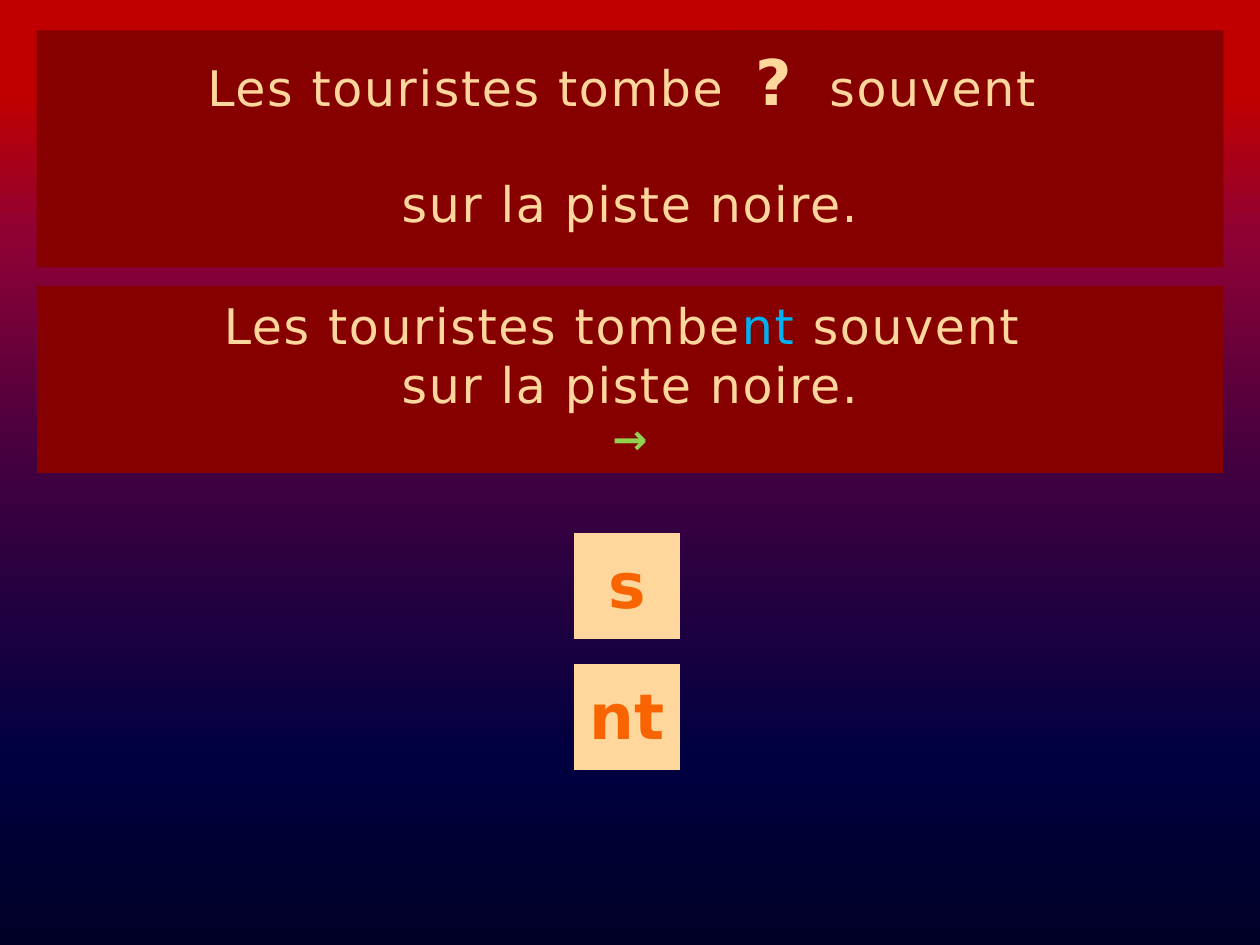
from dataclasses import dataclass

from lxml import etree
from pptx import Presentation, util as u
from pptx.dml.color import RGBColor
from pptx.enum import shapes, text
from pptx.oxml import ns


@dataclass(frozen=True)
class Theme:
    font: str = "DejaVu Sans"
    panel: str = "860000"
    cream: str = "FFD79D"
    orange: str = "F86400"
    blue: str = "00B0F0"
    green: str = "92D050"
    sky: tuple = ((0, "000026"), (20, "000040"), (50, "400040"),
                  (75, "8F0134"), (90, "C00000"))
    body: int = 28
    mark: int = 36
    arrow: int = 24
    track: int = 1


class Deck:
    """Holds the theme and the current slide; lengths are hundredths of its width."""

    def __init__(self, theme):
        self.theme = theme
        self.show = Presentation()
        self.show.slide_width, self.show.slide_height = u.Inches(10), u.Inches(7.5)
        self.cell = self.show.slide_width / 100
        self.slide = self.show.slides.add_slide(self.show.slide_layouts[5])

    def sky(self):
        """Fill the background with the theme's stops, rising from the bottom."""
        fill = self.slide.background.fill
        fill.gradient()
        fill.gradient_angle = 90
        stops = self.slide.background._cSld.find(".//" + ns.qn("a:gsLst"))
        for old in list(stops):
            stops.remove(old)
        for spot, tint in self.theme.sky:
            stop = etree.SubElement(stops, ns.qn("a:gs"), pos=str(spot * 1000))
            etree.SubElement(stop, ns.qn("a:srgbClr"), val=tint)

    def dress(self, shape, box, fill, top=0.04, foot=0.08):
        """Place and fill a shape, and return its emptied text frame."""
        shape.left, shape.top, shape.width, shape.height = (
            u.Emu(round(n * self.cell)) for n in box)
        shape.fill.solid()
        shape.fill.fore_color.rgb = RGBColor.from_string(fill)
        shape.line.fill.background()
        frame = shape.text_frame
        frame.auto_size = text.MSO_AUTO_SIZE.NONE
        frame.word_wrap = False
        frame.vertical_anchor = text.MSO_ANCHOR.MIDDLE
        frame.margin_left = frame.margin_right = u.Inches(0.1)
        frame.margin_top, frame.margin_bottom = u.Inches(top), u.Inches(foot)
        return frame

    def block(self, box, fill, **pads):
        shape = self.slide.shapes.add_shape(
            shapes.MSO_SHAPE.ACTION_BUTTON_CUSTOM, 0, 0, 0, 0)
        shape.shadow.inherit = False
        return self.dress(shape, box, fill, **pads)

    def title(self, box, fill, **pads):
        return self.dress(self.slide.shapes.title, box, fill, **pads)

    def line(self, frame, runs, size, tint, bold=False, track=0, before=0, after=0):
        """Write a line of (words, colour or None, tracking or None) runs."""
        para = frame.paragraphs[0]
        if para.runs:
            para = frame.add_paragraph()
        para.alignment = text.PP_ALIGN.CENTER
        para.space_before, para.space_after = u.Pt(before), u.Pt(after)
        para.font.name, para.font.size = self.theme.font, u.Pt(size)
        para.font.bold = bold
        for words, shade, gap in runs:
            run = para.add_run()
            run.text = words
            run.font.color.rgb = RGBColor.from_string(shade or tint)
            run._r.get_or_add_rPr().set("spc", str(round((gap or track) * 100)))

    def tile(self, box, fill, words, tint):
        self.line(self.block(box, fill), [(words, None, None)],
                  self.theme.mark, tint, bold=True)


def main():
    theme = Theme()
    deck = Deck(theme)
    deck.sky()
    style = dict(size=theme.body, tint=theme.cream, track=theme.track)
    left, wide, side = 2.9, 94.2, 8.4
    start, rest = "Les touristes tombe", "sur la piste noire."

    ask = deck.title((left, 2.4, wide, 18.8), theme.panel, top=0.02)
    deck.line(ask, [(start, None, None), (" ", None, 50.5),
                    ("souvent ", None, None)], **style)
    deck.line(ask, [(rest, None, None)], before=33, **style)
    deck.tile((57.2, 2.4, side, side), theme.panel, "?", theme.cream)

    for row, ending in enumerate(("s", "nt")):
        deck.tile((45.6, 42.3 + 10.4 * row, side, side),
                  theme.cream, ending, theme.orange)

    reply = deck.block((left, 22.7, wide, 14.8), theme.panel, foot=0.04)
    deck.line(reply, [(start, None, None), ("nt", theme.blue, None),
                      (" souvent ", None, None)], **style)
    deck.line(reply, [(rest, None, None)], **style)
    deck.line(reply, [("→", None, None)], theme.arrow, theme.green,
              bold=True, track=theme.track, after=6)

    deck.show.save("out.pptx")


if __name__ == "__main__":
    main()
